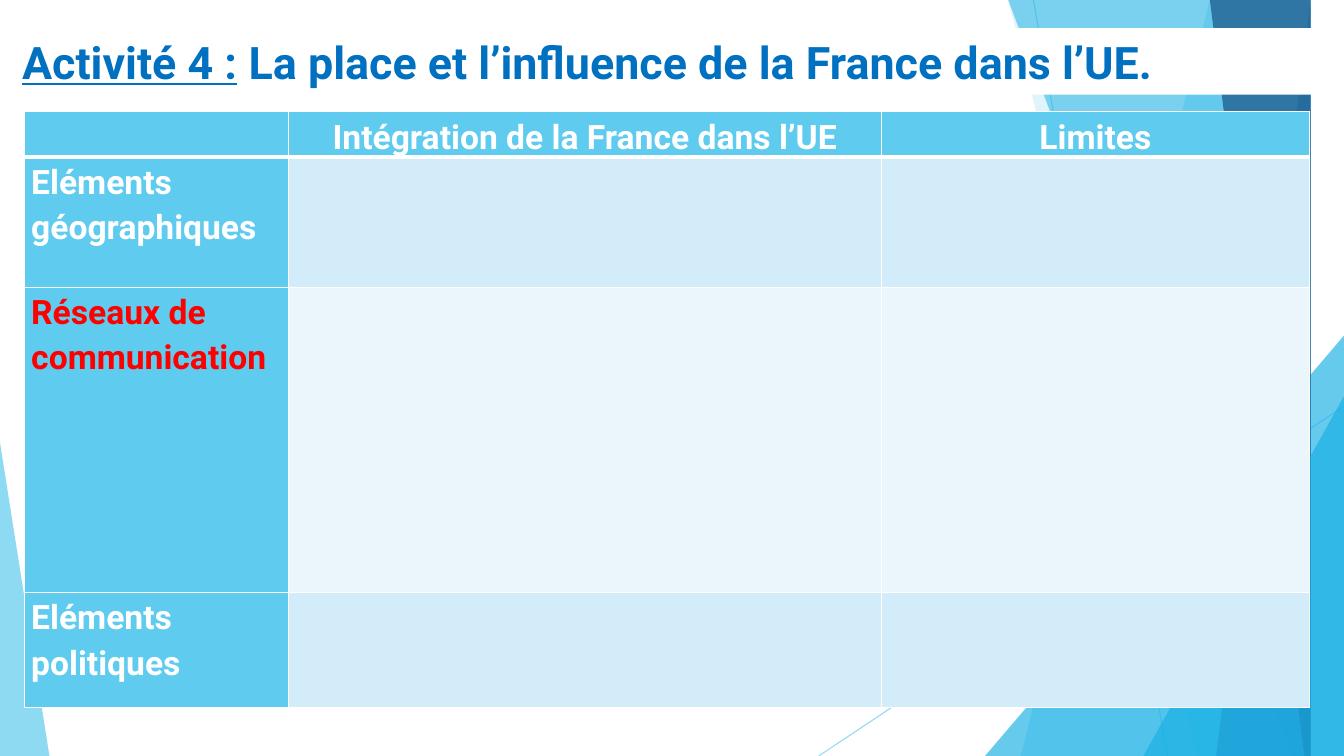
from pptx import Presentation
from pptx.dml.color import RGBColor as Rgb
from pptx.enum.shapes import MSO_CONNECTOR as Conn, MSO_SHAPE as Form
from pptx.enum.text import MSO_ANCHOR as Anchor, PP_ALIGN as Align
from pptx.oxml.ns import qn
from pptx.util import Inches, Pt
from lxml.etree import SubElement as Sub, Element

WIDE, HIGH = 13.33, 7.5
COLORS = {
    "white": "FFFFFF", "sky": "5FCBEF", "cyan": "17B0E4", "blue": "2E83C3",
    "navy": "226292", "title": "0070C0", "red": "FF0000",
    "band": "D2ECF9", "pale": "EAF6FC",
}


class Deck:
    font = "Roboto"

    def __init__(self):
        self.prs = Presentation()
        self.prs.slide_width, self.prs.slide_height = Inches(WIDE), Inches(HIGH)
        self.slide = self.prs.slides.add_slide(self.prs.slide_layouts[6])
        self.shapes = self.slide.shapes

    def paint(self, fill, color, alpha=100):
        fill.solid()
        fill.fore_color.rgb = Rgb.from_string(COLORS[color])
        if alpha < 100:
            # The colour node is the only one of its kind in the fill
            node = fill._xPr.find(".//" + qn("a:srgbClr"))
            Sub(node, qn("a:alpha"), val=str(alpha * 1000))

    def finish(self, shape, color, alpha):
        shape.shadow.inherit = False
        shape.line.fill.background()
        self.paint(shape.fill, color, alpha)

    def line(self, x1, y1, x2, y2, color, alpha):
        line = self.shapes.add_connector(
            Conn.STRAIGHT, *map(Inches, (x1, y1, x2, y2)))
        line.line.width = Pt(0.75)
        self.paint(line.line.fill, color, alpha)
        Sub(line._element.spPr, qn("a:effectLst"))

    def poly(self, points, color, alpha):
        form = self.shapes.build_freeform(*points[0], scale=Inches(1))
        form.add_line_segments(points[1:], close=True)
        self.finish(form.convert_to_shape(), color, alpha)

    def wedge(self, x, y, w, h, tip, color, alpha):
        shape = self.shapes.add_shape(
            Form.ISOSCELES_TRIANGLE, *map(Inches, (x, y, w, h)))
        shape.adjustments[0] = tip
        self.finish(shape, color, alpha)

    def style(self, par, size, color):
        par.font.name, par.font.size, par.font.bold = self.font, Pt(size), True
        par.font.color.rgb = Rgb.from_string(COLORS[color])

    def title(self, x, y, w, h, lead, rest):
        box = self.shapes.add_textbox(*map(Inches, (x, y, w, h)))
        self.paint(box.fill, "white")
        frame = box.text_frame
        frame.word_wrap, frame.vertical_anchor = True, Anchor.MIDDLE
        par = frame.paragraphs[0]
        self.style(par, 32, "title")
        for text, under in ((lead, True), (rest, False)):
            run = par.add_run()
            run.text, run.font.underline = text, under

    def edge(self, cell, widths):
        props = cell._tc.get_or_add_tcPr()
        for i, (side, width) in enumerate(zip("LRTB", widths)):
            line = Element(qn("a:ln" + side), w=str(Pt(width)))
            fill = Sub(line, qn("a:solidFill"))
            Sub(fill, qn("a:srgbClr"), val=COLORS["white"])
            props.insert(i, line)

    def cell(self, cell, text, fill, color, center, widths):
        self.paint(cell.fill, fill)
        self.edge(cell, widths)
        cell.margin_left = cell.margin_right = Inches(0.07)
        cell.margin_top = cell.margin_bottom = 0
        par = cell.text_frame.paragraphs[0]
        par.text = text
        par.line_spacing = 1.15
        par.alignment = Align.CENTER if center else Align.LEFT
        self.style(par, 24, color)

    def table(self, x, y, cols, rows, heads, names):
        table = self.shapes.add_table(
            len(rows), len(cols),
            *map(Inches, (x, y, sum(cols), sum(rows)))).table
        for col, width in zip(table.columns, cols):
            col.width = Inches(width)
        for row, height in zip(table.rows, rows):
            row.height = Inches(height)
        for r in range(len(rows)):
            name, color = names[r - 1] if r else ("", "white")
            texts = [name, "", ""] if r else heads
            widths = (1, 1, 3 if r == 1 else 1, 1 if r else 3)
            for c, text in enumerate(texts):
                head = r == 0 or c == 0
                fill = "sky" if head else ("band" if r % 2 else "pale")
                self.cell(table.cell(r, c), text, fill, color, r == 0, widths)


def main():
    deck = Deck()

    # Slanted facets behind the content
    deck.line(10.25, 0, 11.58, HIGH, "sky", 70)
    deck.line(WIDE, 4.03, 8.12, HIGH, "sky", 70)

    def facet(top, foot, color, alpha):
        deck.poly([(top, -0.01), (WIDE, -0.01), (WIDE, HIGH), (foot, HIGH)],
                  color, alpha)

    facet(12.28, 10.04, "sky", 36)
    facet(10.5, 11.83, "sky", 20)
    deck.wedge(9.77, 3.33, 3.56, 4.17, 1, "cyan", 66)
    facet(10.21, 12.91, "cyan", 50)
    facet(13.03, 11.92, "blue", 70)
    facet(11.96, 13.18, "navy", 80)
    deck.wedge(11.34, 3.93, 1.99, 3.57, 1, "cyan", 66)
    deck.wedge(0, 4.39, 0.49, 3.11, 0, "sky", 70)

    # Table to fill in
    deck.table(
        0.24, 1.11, [2.62, 5.88, 4.25], [0.41, 1.29, 3.03, 1.14],
        ["", "Intégration de la France dans l’UE", "Limites"],
        [("Eléments géographiques", "white"),
         ("Réseaux de communication", "red"),
         ("Eléments politiques", "white")])

    # Title
    deck.title(0.12, 0.28, 12.99, 0.66, "Activité 4 :",
               " La place et l’influence de la France dans l’UE.")

    deck.prs.save("out.pptx")


if __name__ == "__main__":
    main()
